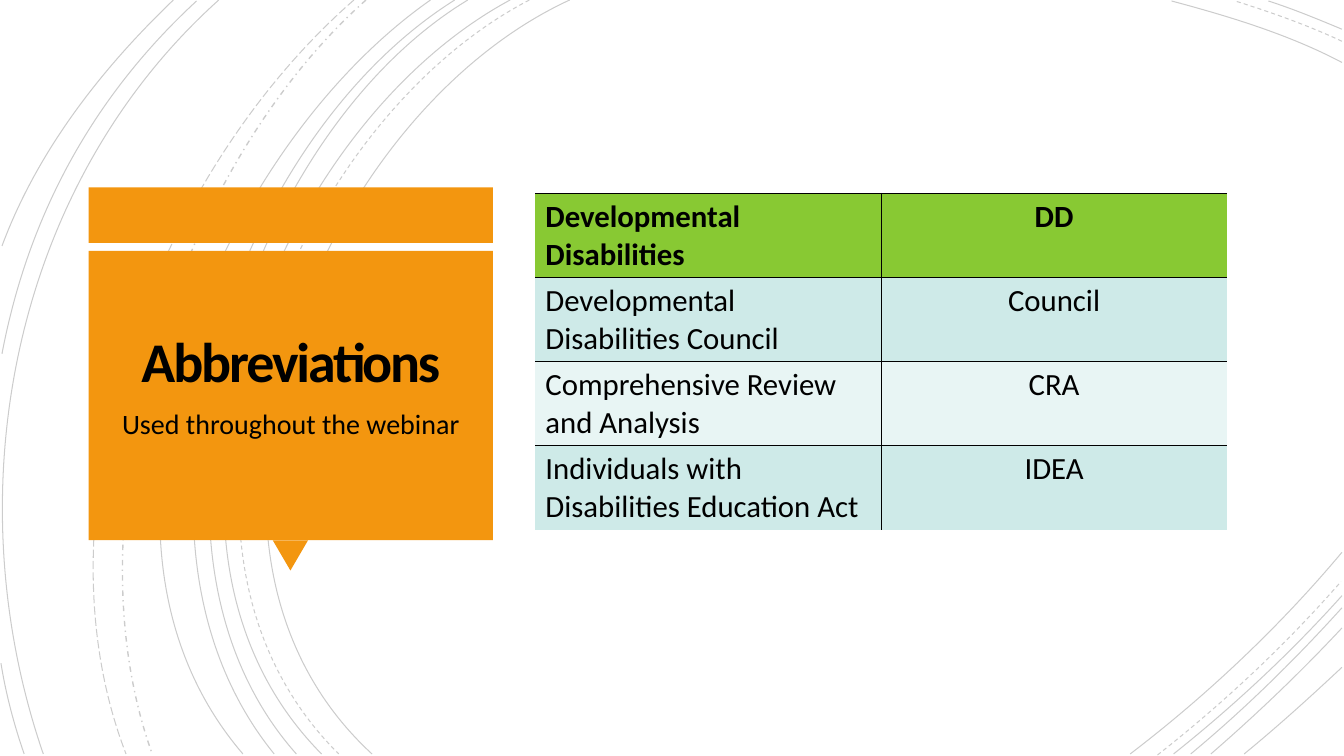
import pptx
import pptx.util
import pptx.dml.color
import pptx.oxml
import pptx.oxml.ns
import pptx.enum.dml
import pptx.enum.shapes
import pptx.enum.text

Inch = pptx.util.Inches
Pt = pptx.util.Pt
qn = pptx.oxml.ns.qn
Shape = pptx.enum.shapes.MSO_SHAPE
Dash = pptx.enum.dml.MSO_LINE
Align = pptx.enum.text.PP_ALIGN
Anchor = pptx.enum.text.MSO_ANCHOR
HUES = {"ink": "000000", "panel": "F3960F", "head": "88C933",
        "dark": "CEEAE8", "light": "E8F5F4"}
FONT = "Calibri"
PLAIN = "{2D5ABB26-0587-4C30-8999-92F81FD0307C}"  # table style without lines

# Arcs: start, two control points, end; grouped by dash style and width
ARCS = [
    (Dash.SOLID, 0.75, [
        (5.65, 0, 3.15, 1.15, 1.43, 5.4, 3.69, 7.48),
        (5.06, 0, 2.7, 1.27, 1.1, 5.37, 3.19, 7.48),
        (4.64, 0, 2.44, 1.33, 1.1, 5.41, 2.94, 7.48),
        (4.51, 0, 2.31, 1.38, 0.97, 5.33, 2.72, 7.48),
        (4.27, 0, 2.17, 1.47, 0.53, 5.29, 2.41, 7.48),
        (2.17, 0, 0.11, 1.85, -0.46, 4.9, 0.43, 7.48),
        (1.95, 0.01, 0.92, 0.96, 0.28, 2.14, 0.02, 3.51),
        (1.72, 0, 1, 0.69, 0.37, 1.5, 0.02, 2.44),
        (0.01, 6.58, 0.06, 6.89, 0.14, 7.19, 0.24, 7.48),
        (13.31, 0.62, 12.78, 0.34, 12.18, 0.16, 11.62, 0.01),
        (13.31, 0.29, 13.07, 0.19, 12.83, 0.09, 12.58, 0.01),
        (11.21, 7.48, 11.97, 6.9, 12.69, 6.22, 13.31, 5.48),
        (11.64, 7.48, 12.23, 7.01, 12.8, 6.48, 13.31, 5.91),
        (11.81, 7.48, 12.34, 7.04, 12.84, 6.55, 13.31, 6.03),
        (12.01, 7.48, 12.46, 7.09, 12.9, 6.67, 13.31, 6.23),
        (12.34, 7.48, 12.67, 7.21, 12.99, 6.92, 13.31, 6.62)]),
    (Dash.DASH, 0.75, [
        (5.25, 0, 2.85, 1.25, 1.23, 5.37, 3.36, 7.48),
        (13.31, 0.41, 12.97, 0.25, 12.6, 0.12, 12.25, 0.01),
        (11.48, 7.49, 12.13, 6.98, 12.75, 6.4, 13.3, 5.77)]),
    (Dash.DASH_DOT, 1, [(3.63, 0, 1.76, 1.66, 0.65, 5.09, 1.51, 7.48)]),
    (Dash.LONG_DASH, 0.75, [(3.51, 0, 1.57, 1.69, 0.29, 4.99, 1.25, 7.48)]),
]
ROWS = [("Developmental Disabilities", "DD"),
        ("Developmental Disabilities Council", "Council"),
        ("Comprehensive Review and Analysis", "CRA"),
        ("Individuals with Disabilities Education Act", "IDEA")]


def hue(name):
    return pptx.dml.color.RGBColor.from_string(HUES[name])


def make(xml):
    """Parse one element of the drawing namespace."""
    tag, rest = xml[:-1].split(" ", 1)
    return pptx.oxml.parse_xml(
        f'{tag} {pptx.oxml.ns.nsdecls("a")} {rest}>')


def style(par, size, bold=False, align=None):
    font = par.font
    font.name, font.size, font.bold = FONT, Pt(size), bold
    font.color.rgb = hue("ink")
    par.alignment = align


def add_arc(group, arc):
    """Outline through the four points, bent into one cubic curve."""
    first, *rest = [(Inch(x), Inch(y)) for x, y in zip(arc[::2], arc[1::2])]
    pen = group.shapes.build_freeform(*first)
    pen.add_line_segments(rest, close=False)
    curve = pen.convert_to_shape()
    track = curve._element.find(".//" + qn("a:path"))
    bend = make('<a:cubicBezTo />')
    for leg in track.findall(qn("a:lnTo")):
        bend.append(leg[0])
        track.remove(leg)
    track.append(bend)
    return curve


def draw_arcs(slide):
    group = slide.shapes.add_group_shape()
    for dash, width, arcs in ARCS:
        for arc in arcs:
            curve = add_arc(group, arc)
            curve.shadow.inherit = False
            curve.fill.background()
            line = curve.line
            line.color.rgb = hue("ink")
            line.width, line.dash_style = Pt(width), dash
            # 20 % opacity
            tint = line._ln.find(".//" + qn("a:srgbClr"))
            tint.append(make('<a:alpha val="20000"/>'))


def draw_block(group, kind, x, y, w, h):
    block = group.shapes.add_shape(kind, Inch(x), Inch(y), Inch(w), Inch(h))
    block.shadow.inherit = False
    block.fill.solid()
    block.fill.fore_color.rgb = hue("panel")
    block.line.fill.background()
    return block


def draw_panel(slide, x, y, w, h):
    # Strip, pointer and body
    strip, gap, tip = 0.55, 0.08, 0.3
    top = y + strip + gap
    body = h - strip - gap - tip
    group = slide.shapes.add_group_shape()
    draw_block(group, Shape.RECTANGLE, x, y, w, strip)
    draw_block(group, Shape.ISOSCELES_TRIANGLE, x + w / 2 - 0.18,
               y + h - tip, 0.35, tip).rotation = 180
    draw_block(group, Shape.RECTANGLE, x, top, w, body)

    # Title in the upper half, subtitle in the lower half
    pad = 0.09
    left, wide, tall = Inch(x + pad), Inch(w - 2 * pad), Inch(1.34)
    title = slide.shapes.title
    title.left, title.top = left, Inch(top + 0.08)
    title.width, title.height = wide, tall
    title._element.getparent().append(title._element)
    frame = title.text_frame
    frame.text = "Abbreviations"
    frame.auto_size = pptx.enum.text.MSO_AUTO_SIZE.NONE
    frame.vertical_anchor = Anchor.BOTTOM
    frame.margin_left = frame.margin_right = frame.margin_top = Inch(0.25)
    frame.margin_bottom = 0
    par = frame.paragraphs[0]
    style(par, 40, True, Align.CENTER)
    par.line_spacing = 0.85
    par.runs[0].font._element.set("spc", "-150")

    note = slide.shapes.add_textbox(left, Inch(top + 1.43), wide, tall)
    note.text_frame.word_wrap = True
    par = note.text_frame.paragraphs[0]
    par.text = "Used throughout the webinar"
    style(par, 20, align=Align.CENTER)
    par.line_spacing, par.space_before = 1.2, Pt(10)


def rule_cell(cell, sides):
    for side in sides:
        cell._tc.get_or_add_tcPr().append(make(
            f'<a:ln{side} w="12700"><a:solidFill>'
            f'<a:srgbClr val="{HUES["ink"]}"/></a:solidFill></a:ln{side}>'))


def draw_table(slide, x, y, w, h):
    holder = slide.shapes.add_table(len(ROWS), 2, Inch(x), Inch(y),
                                    Inch(w), Inch(h))
    table = holder.table
    table._tbl.tblPr.find(qn("a:tableStyleId")).text = PLAIN
    table.horz_banding = False
    for r, row in enumerate(ROWS):
        table.rows[r].height = Inch(0.41)  # grows to fit two lines
        fill = "head" if r == 0 else ("light", "dark")[r % 2]
        for c, text in enumerate(row):
            cell = table.cell(r, c)
            below = "B" if r < len(ROWS) - 1 else ""
            rule_cell(cell, ("R", "L")[c] + "T" + below)
            cell.fill.solid()
            cell.fill.fore_color.rgb = hue(fill)
            cell.text = text
            style(cell.text_frame.paragraphs[0], 22, r == 0,
                  (Align.LEFT, Align.CENTER)[c])
    holder.height = Inch(h)


def main():
    deck = pptx.Presentation()
    deck.slide_width, deck.slide_height = Inch(13.33), Inch(7.5)
    slide = deck.slides.add_slide(deck.slide_layouts[5])
    draw_arcs(slide)
    draw_panel(slide, 0.88, 1.86, 4.01, 3.8)
    draw_table(slide, 5.31, 1.92, 6.86, 3.33)
    deck.save("out.pptx")


if __name__ == "__main__":
    main()
